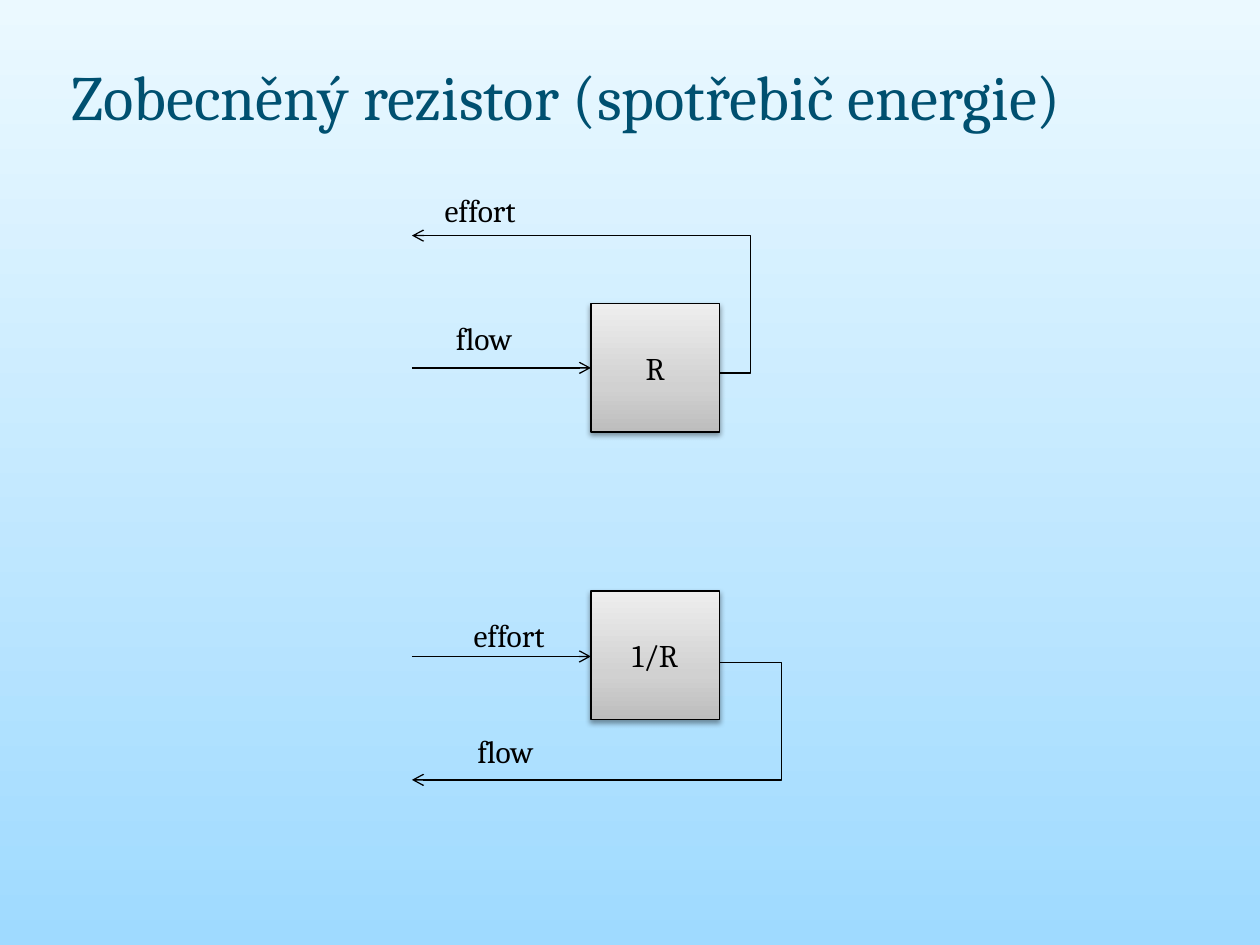
import copy

import lxml.etree
import pptx
import pptx.dml.color
import pptx.enum.shapes
import pptx.enum.text
import pptx.oxml
import pptx.oxml.ns
import pptx.util

Inches = pptx.util.Inches
Pt = pptx.util.Pt
RGBColor = pptx.dml.color.RGBColor
qn = pptx.oxml.ns.qn

BLACK = RGBColor(0x00, 0x00, 0x00)
TITLE_BLUE = RGBColor(0x00, 0x50, 0x70)
SKY_TOP = RGBColor(0xEB, 0xF9, 0xFF)
SKY_BOTTOM = RGBColor(0x9F, 0xDA, 0xFF)
GREY_DARK = RGBColor(0xBD, 0xBD, 0xBD)
GREY_MIDDLE = RGBColor(0xD1, 0xD1, 0xD1)
GREY_LIGHT = RGBColor(0xEE, 0xEE, 0xEE)

BLOCK_LEFT, BLOCK_SIZE, SIGNAL_LEFT = 4.69, 1.02, 3.27
BLOCK_RIGHT = BLOCK_LEFT + BLOCK_SIZE


class Diagram:
    """Holds the style and the current slide of a block diagram."""

    font_name = "Cambria"
    text_size = 18
    title_size = 36
    line_width = 0.75

    def __init__(self, deck):
        self.page = deck.slides.add_slide(deck.slide_layouts[6])
        self.shapes = self.page.shapes

    def start_group(self):
        self.shapes = self.page.shapes.add_group_shape().shapes

    def gradient(self, fill, stops, angle):
        fill.gradient()
        fill.gradient_angle = angle
        first = fill.gradient_stops[0]._gs
        for _ in stops[2:]:
            first.addnext(copy.deepcopy(first))
        for stop, (position, color) in zip(fill.gradient_stops, stops):
            stop.position = position
            stop.color.rgb = color

    def background(self):
        self.gradient(self.page.background.fill, [(0, SKY_TOP), (1, SKY_BOTTOM)], 270)

    def set_text(self, box, text, size, color):
        paragraph = box.text_frame.paragraphs[0]
        paragraph.text = text
        for span in paragraph.runs:
            span.font.name = self.font_name
            span.font.size = Pt(size)
            span.font.color.rgb = color
        return paragraph

    def title(self, text):
        box = self.shapes.add_textbox(Inches(0.47), Inches(0.21), Inches(8.99), Inches(1.1))
        box.text_frame.word_wrap = True
        box.text_frame.vertical_anchor = pptx.enum.text.MSO_ANCHOR.MIDDLE
        self.set_text(box, text, self.title_size, TITLE_BLUE)

    def label(self, text, left, top, width):
        box = self.shapes.add_textbox(Inches(left), Inches(top), Inches(width), Inches(0.4))
        box.text_frame.word_wrap = False
        box.text_frame.auto_size = pptx.enum.text.MSO_AUTO_SIZE.SHAPE_TO_FIT_TEXT
        self.set_text(box, text, self.text_size, BLACK)

    def outline(self, shape):
        shape.line.color.rgb = BLACK
        shape.line.width = Pt(self.line_width)

    def block(self, text, top):
        box = self.shapes.add_shape(
            pptx.enum.shapes.MSO_SHAPE.RECTANGLE,
            Inches(BLOCK_LEFT), Inches(top), Inches(BLOCK_SIZE), Inches(BLOCK_SIZE))
        self.gradient(box.fill, [(0, GREY_DARK), (0.35, GREY_MIDDLE), (1, GREY_LIGHT)], 90)
        self.outline(box)
        box.shadow.inherit = False
        effects = box._element.spPr.find(qn("a:effectLst"))
        shadow = lxml.etree.SubElement(
            effects, qn("a:outerShdw"), blurRad=str(Pt(3.1)), dist=str(Pt(1.6)),
            dir="5400000", algn="ctr", rotWithShape="0")
        color = lxml.etree.SubElement(shadow, qn("a:srgbClr"), val=str(BLACK))
        lxml.etree.SubElement(color, qn("a:alpha"), val="38000")
        box.text_frame.vertical_anchor = pptx.enum.text.MSO_ANCHOR.MIDDLE
        paragraph = self.set_text(box, text, self.text_size, BLACK)
        paragraph.alignment = pptx.enum.text.PP_ALIGN.CENTER

    def arrow(self, kind, start, end):
        connector = self.shapes.add_connector(kind, *map(Inches, start + end))
        self.outline(connector)
        properties = connector._element.spPr
        lxml.etree.SubElement(properties.find(qn("a:ln")), qn("a:tailEnd"), type="arrow")
        lxml.etree.SubElement(properties, qn("a:effectLst"))
        return properties

    def input_arrow(self, y):
        self.arrow(pptx.enum.shapes.MSO_CONNECTOR.STRAIGHT, (SIGNAL_LEFT, y), (BLOCK_LEFT, y))

    def output_arrow(self, start_y, end_y, turn_x):
        properties = self.arrow(
            pptx.enum.shapes.MSO_CONNECTOR.ELBOW, (BLOCK_RIGHT, start_y), (SIGNAL_LEFT, end_y))
        bend = round((BLOCK_RIGHT - turn_x) / (BLOCK_RIGHT - SIGNAL_LEFT) * 100000)
        guides = properties.find(qn("a:prstGeom")).find(qn("a:avLst"))
        lxml.etree.SubElement(guides, qn("a:gd"), name="adj1", fmla=f"val {bend}")


def main():
    deck = pptx.Presentation()
    deck.slide_width, deck.slide_height = Inches(10), Inches(7.5)
    diagram = Diagram(deck)
    diagram.background()
    diagram.title("Zobecněný rezistor (spotřebič energie)")

    resistors = [
        ("R", 2.41, 2.92, (2.96, 1.87, 5.96), (3.52, 2.48), (3.43, 1.47)),
        ("1/R", 4.69, 5.21, (5.26, 6.19, 6.2), (3.69, 5.76), (3.66, 4.84)),
    ]
    for name, top, input_y, output, flow, effort in resistors:
        diagram.start_group()
        diagram.block(name, top)
        diagram.input_arrow(input_y)
        diagram.output_arrow(*output)
        diagram.label("flow", *flow, 0.68)
        diagram.label("effort", *effort, 0.82)

    deck.save("out.pptx")


if __name__ == "__main__":
    main()
